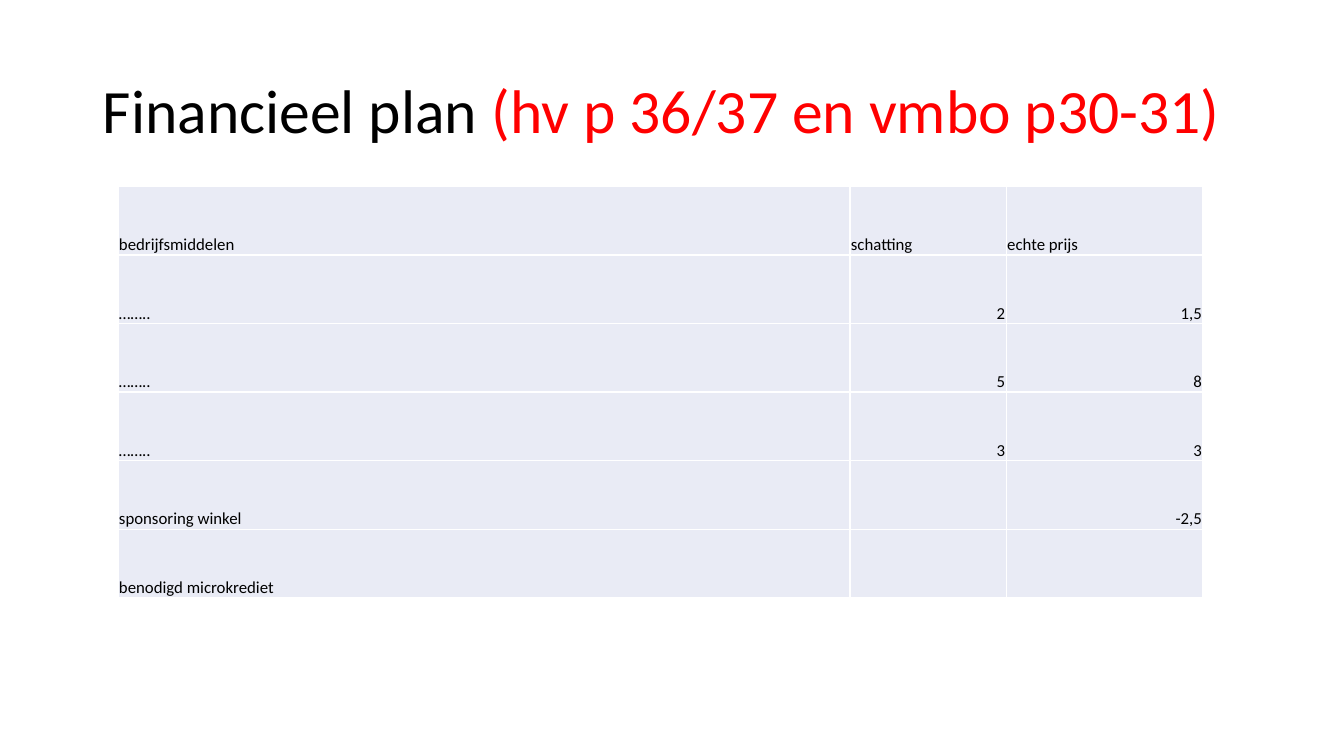
from dataclasses import dataclass

from lxml.etree import SubElement
from pptx import Presentation
from pptx.dml.color import RGBColor
from pptx.enum.text import MSO_ANCHOR, MSO_AUTO_SIZE, PP_ALIGN
from pptx.oxml.ns import qn
from pptx.util import Emu, Pt

EMU_PER_PX = 9144  # 100 px to the inch
FONT = "Calibri"
BLACK, RED, WHITE, LAVENDER = "000000", "FF0000", "FFFFFF", "E9EBF5"


@dataclass
class BudgetRow:
    item: str
    estimate: str = ""
    price: str = ""


BUDGET = [
    BudgetRow("bedrijfsmiddelen", "schatting", "echte prijs"),
    BudgetRow("……..", "2", "1,5"),
    BudgetRow("……..", "5", "8"),
    BudgetRow("……..", "3", "3"),
    BudgetRow("sponsoring winkel", price="-2,5"),
    BudgetRow("benodigd microkrediet"),
]
COLUMN_WIDTHS = [726, 155, 195]
ROW_HEIGHT = 68


def px(length: int) -> Emu:
    return Emu(length * EMU_PER_PX)


def color(hex_value: str) -> RGBColor:
    return RGBColor.from_string(hex_value)


def add_text(para, text: str, *, size: int, hex_color: str = BLACK) -> None:
    span = para.add_run()
    span.text = text
    span.font.name = FONT
    span.font.size = Pt(size)
    span.font.color.rgb = color(hex_color)


def add_borders(cell, hex_color: str) -> None:
    properties = cell._tc.get_or_add_tcPr()
    for side in ("a:lnL", "a:lnR", "a:lnT", "a:lnB"):
        line = SubElement(properties, qn(side), w=str(Pt(1)))
        fill = SubElement(line, qn("a:solidFill"))
        SubElement(fill, qn("a:srgbClr"), val=hex_color)


def fill_cell(cell, text: str, align: PP_ALIGN) -> None:
    add_borders(cell, WHITE)  # borders come before the fill in the XML
    cell.fill.solid()
    cell.fill.fore_color.rgb = color(LAVENDER)
    if not text:
        return
    cell.vertical_anchor = MSO_ANCHOR.BOTTOM
    cell.margin_left = cell.margin_right = cell.margin_top = px(1)
    cell.margin_bottom = 0
    para = cell.text_frame.paragraphs[0]
    para.alignment = align
    add_text(para, text, size=12)


def add_title(page) -> None:
    title = page.shapes.title
    title.left, title.top, title.width, title.height = map(px, (92, 40, 1150, 145))
    frame = title.text_frame
    frame.auto_size = MSO_AUTO_SIZE.NONE
    frame.vertical_anchor = MSO_ANCHOR.MIDDLE
    para = frame.paragraphs[0]
    para.alignment = PP_ALIGN.LEFT
    para.line_spacing = 0.9
    add_text(para, "Financieel plan ", size=44)
    add_text(para, "(hv p 36/37 en vmbo p30-31)", size=44, hex_color=RED)


def add_budget_table(page) -> None:
    table = page.shapes.add_table(
        len(BUDGET), len(COLUMN_WIDTHS), px(117), px(185),
        px(sum(COLUMN_WIDTHS)), px(ROW_HEIGHT * len(BUDGET)),
    ).table
    table.first_row = table.horz_banding = False
    for column, width in zip(table.columns, COLUMN_WIDTHS):
        column.width = px(width)
    for row_index, entry in enumerate(BUDGET):
        table.rows[row_index].height = px(ROW_HEIGHT)
        for column_index, text in enumerate((entry.item, entry.estimate, entry.price)):
            # Amounts sit right; headings and item names sit left
            is_amount = row_index > 0 and column_index > 0
            align = PP_ALIGN.RIGHT if is_amount else PP_ALIGN.LEFT
            fill_cell(table.cell(row_index, column_index), text, align)


def main() -> None:
    deck = Presentation()
    deck.slide_width, deck.slide_height = px(1333), px(750)
    page = deck.slides.add_slide(deck.slide_layouts[5])  # title only
    add_title(page)
    add_budget_table(page)
    deck.save("out.pptx")


if __name__ == "__main__":
    main()
